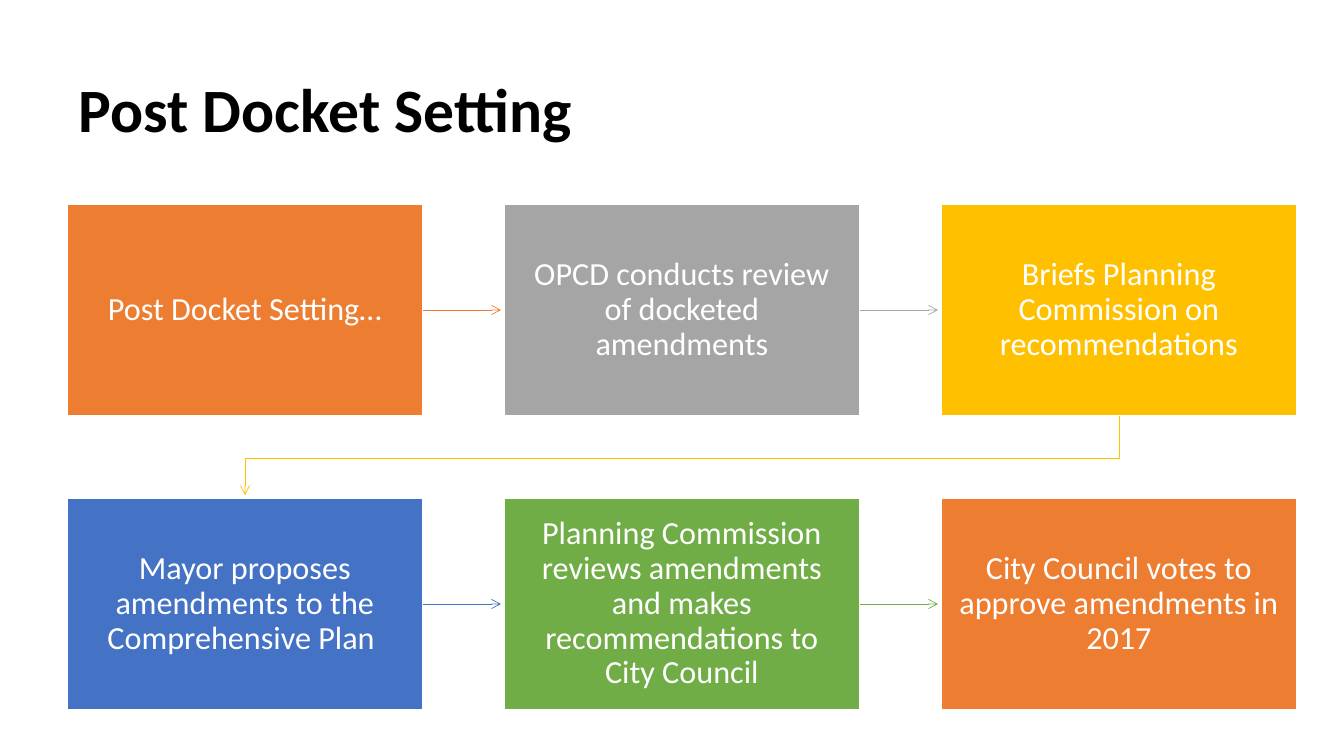
from lxml.etree import SubElement
from pptx import Presentation
from pptx.dml.color import RGBColor
from pptx.enum.shapes import MSO_CONNECTOR as Connector, MSO_SHAPE as Shape
from pptx.enum.text import MSO_ANCHOR as Anchor, PP_ALIGN as Align
from pptx.oxml.ns import qn
from pptx.util import Pt

EMU_PER_PX = 914400 / 100.8
LEFT, TOP = 67, 204
COLUMN_STEP, ROW_STEP = 437, 294
BOX_WIDTH, BOX_HEIGHT = 356, 212
ARROW_LENGTH = 78
COLUMNS = 3

STEPS = [
    ("Post Docket Setting…", "ED7D31"),
    ("OPCD conducts review of docketed amendments", "A5A5A5"),
    ("Briefs Planning Commission on recommendations", "FFC000"),
    ("Mayor proposes amendments to the Comprehensive Plan ", "4472C4"),
    ("Planning Commission reviews amendments and makes recommendations to City Council", "70AD47"),
    ("City Council votes to approve amendments in 2017", "ED7D31"),
]


def px(length):
    return round(length * EMU_PER_PX)


def color(value):
    return RGBColor.from_string(value)


class Slide:
    font = "Calibri"

    def __init__(self, deck):
        self.page = deck.slides.add_slide(deck.slide_layouts[6])

    def label(self, frame, text, size, fill, bold=False, align=Align.LEFT):
        frame.text = text
        frame.word_wrap = True
        frame.vertical_anchor = Anchor.MIDDLE
        para = frame.paragraphs[0]
        para.alignment = align
        para.line_spacing = 0.9
        span = para.runs[0]
        span.font.name = self.font
        span.font.size = Pt(size)
        span.font.bold = bold
        span.font.color.rgb = color(fill)

    def title(self, text, left, top, width, height):
        box = self.page.shapes.add_textbox(px(left), px(top), px(width), px(height))
        self.label(box.text_frame, text, 44, "000000", bold=True)

    def step(self, text, fill, left, top):
        box = self.page.shapes.add_shape(
            Shape.RECTANGLE, px(left), px(top), px(BOX_WIDTH), px(BOX_HEIGHT))
        box.shadow.inherit = False
        box.fill.solid()
        box.fill.fore_color.rgb = color(fill)
        box.line.color.rgb = color("FFFFFF")
        box.line.width = Pt(1)
        frame = box.text_frame
        frame.margin_left = frame.margin_right = px(18)
        frame.margin_top = frame.margin_bottom = px(18)
        self.label(frame, text, 23, "FFFFFF", align=Align.CENTER)
        return box

    def style_arrow(self, arrow, fill):
        arrow.line.color.rgb = color(fill)
        arrow.line.width = Pt(0.5)
        outline = arrow._element.spPr.find(qn("a:ln"))
        SubElement(outline, qn("a:tailEnd"), type="arrow")

    def arrow(self, box, fill, left, middle):
        link = self.page.shapes.add_connector(
            Connector.STRAIGHT, px(left), px(middle), px(left + ARROW_LENGTH), px(middle))
        link.begin_connect(box, 3)
        self.style_arrow(link, fill)
        SubElement(link._element.spPr, qn("a:effectLst"))

    def bent_arrow(self, fill, points):
        corners = [(px(x), px(y)) for x, y in points]
        builder = self.page.shapes.build_freeform(*corners[0])
        builder.add_line_segments(corners[1:], close=False)
        route = builder.convert_to_shape()
        route.shadow.inherit = False
        route.fill.background()
        self.style_arrow(route, fill)


def main():
    deck = Presentation()
    deck.slide_width = px(1344)
    deck.slide_height = px(756)
    slide = Slide(deck)
    slide.title("Post Docket Setting", 69, 40, 1182, 146)

    for index, (text, fill) in enumerate(STEPS):
        row, column = divmod(index, COLUMNS)
        left = LEFT + column * COLUMN_STEP
        top = TOP + row * ROW_STEP
        box = slide.step(text, fill, left, top)
        if column < COLUMNS - 1:
            slide.arrow(box, fill, left + BOX_WIDTH, top + BOX_HEIGHT // 2)
        elif index < len(STEPS) - 1:
            start = left + BOX_WIDTH // 2
            end = LEFT + BOX_WIDTH // 2
            bottom = top + BOX_HEIGHT
            turn = bottom + 42
            slide.bent_arrow(fill, [
                (start, bottom), (start, turn), (end, turn), (end, top + ROW_STEP - 3)])

    deck.save("out.pptx")


if __name__ == "__main__":
    main()
